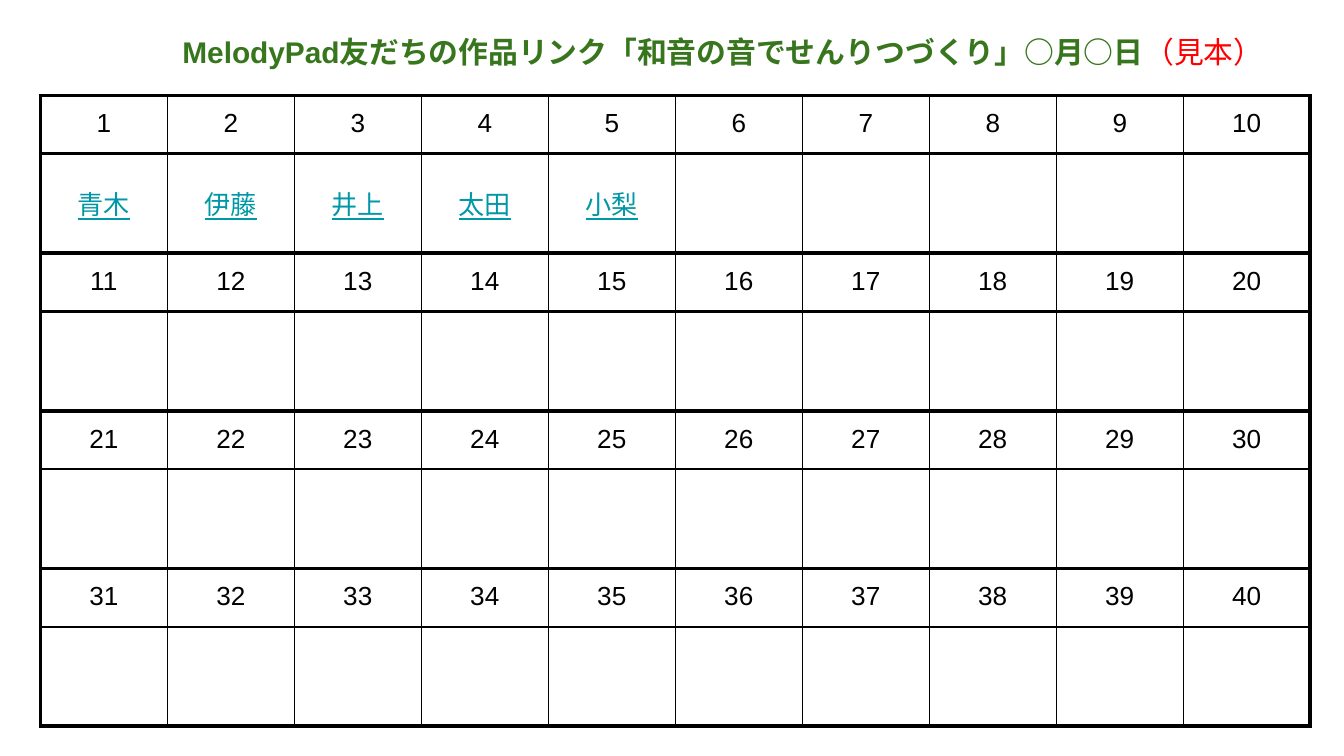
from lxml import etree
from pptx import Presentation
from pptx.dml.color import RGBColor
from pptx.enum.text import MSO_ANCHOR, MSO_AUTO_SIZE, PP_ALIGN
from pptx.oxml.ns import qn
from pptx.util import Inches, Pt

CENTER = PP_ALIGN.CENTER
TOP, MIDDLE = MSO_ANCHOR.TOP, MSO_ANCHOR.MIDDLE
FIT_SHAPE = MSO_AUTO_SIZE.SHAPE_TO_FIT_TEXT

BLACK = RGBColor(0x00, 0x00, 0x00)
GREEN = RGBColor(0x38, 0x76, 0x1D)
RED = RGBColor(0xFF, 0x00, 0x00)
TEAL = RGBColor(0x00, 0x97, 0xA7)

FONT = "Arial"
INSET = Inches(0.1)
THIN, MEDIUM, THICK = Pt(0.75), Pt(1.5), Pt(2.25)

SLIDE_WIDTH = Inches(10)
SLIDE_HEIGHT = SLIDE_WIDTH * 9 // 16
COLS, BANDS = 10, 4
NUMBER_ROW, NAME_ROW = Inches(0.42), Inches(0.74)
TITLE_BOX = (1.21, 0.15, 8.34, 0.47)
TABLE_BOX = (0.3, 0.71, 9.45, 4.71)
TITLE = [
    ("MelodyPad友だちの作品リンク「和音の音でせんりつづくり」○月○日", GREEN, True),
    ("（見本）", RED, False),
]
NAMES = ["青木", "伊藤", "井上", "太田", "小梨"]


def style_run(r, size, color, bold=False, underline=False):
    r.font.name = FONT
    r.font.size = Pt(size)
    r.font.color.rgb = color
    r.font.bold = bold
    r.font.underline = underline


def set_borders(cell, left, right, top, bottom):
    tc_pr = cell._tc.get_or_add_tcPr()
    for side, width in zip("LRTB", (left, right, top, bottom)):
        ln = etree.SubElement(tc_pr, qn(f"a:ln{side}"), w=str(width))
        fill = etree.SubElement(ln, qn("a:solidFill"))
        etree.SubElement(fill, qn("a:srgbClr"), val=str(BLACK))


def add_title(s, box):
    sp = s.shapes.add_textbox(*map(Inches, box))
    tf = sp.text_frame
    tf.word_wrap = True
    tf.auto_size = FIT_SHAPE
    tf.margin_left = tf.margin_right = tf.margin_top = tf.margin_bottom = INSET
    p = tf.paragraphs[0]
    p.alignment = CENTER
    for text, color, bold in TITLE:
        r = p.add_run()
        r.text = text
        style_run(r, 16, color, bold)


def fill_cell(cell, text, is_number):
    cell.margin_left = cell.margin_right = INSET
    cell.margin_top = cell.margin_bottom = INSET
    cell.vertical_anchor = TOP if is_number else MIDDLE
    cell.fill.background()
    p = cell.text_frame.paragraphs[0]
    p.text = text
    p.alignment = CENTER
    for r in p.runs:
        style_run(r, 14, BLACK if is_number else TEAL, underline=not is_number)


def add_link_table(s, box):
    """Alternate rows of seat numbers with rows for the pupils' names."""
    left, top, width, height = map(Inches, box)
    frame = s.shapes.add_table(2 * BANDS, COLS, left, top, width, height)
    table = frame.table
    table.first_row = table.horz_banding = False
    for column in table.columns:
        column.width = width // COLS
    for i, row in enumerate(table.rows):
        is_number = i % 2 == 0
        row.height = NUMBER_ROW if is_number else NAME_ROW
        for j, cell in enumerate(row.cells):
            if is_number:
                text = str(i // 2 * COLS + j + 1)
            else:
                text = NAMES[j] if i == 1 and j < len(NAMES) else ""
            set_borders(
                cell,
                left=THICK if j == 0 else THIN,
                right=THICK if j == COLS - 1 else THIN,
                top=THICK if is_number else MEDIUM,
                bottom=MEDIUM if is_number else THICK,
            )
            fill_cell(cell, text, is_number)
    frame.height = height


def main():
    prs = Presentation()
    prs.slide_width, prs.slide_height = SLIDE_WIDTH, SLIDE_HEIGHT
    s = prs.slides.add_slide(prs.slide_layouts[6])
    add_title(s, TITLE_BOX)
    add_link_table(s, TABLE_BOX)
    prs.save("out.pptx")


if __name__ == "__main__":
    main()
